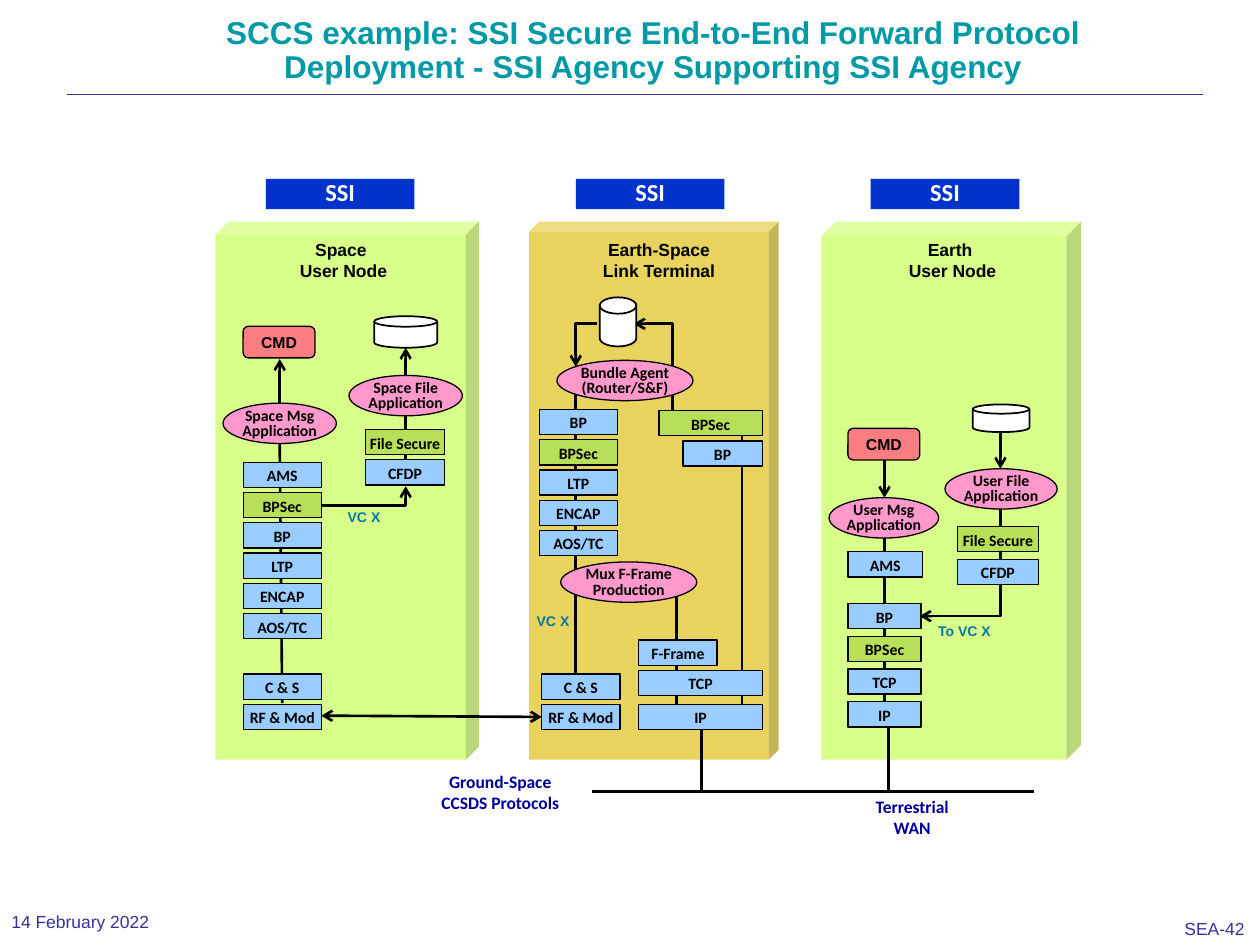
from lxml.etree import SubElement
from pptx import Presentation
from pptx.dml.color import RGBColor
from pptx.enum.shapes import MSO_CONNECTOR as Link, MSO_SHAPE as Shape
from pptx.enum.text import MSO_ANCHOR as Anchor, PP_ALIGN as Align
from pptx.oxml.ns import qn
from pptx.util import Inches, Pt

COLORS = {
    "title": "0099A6", "footer": "333399", "label": "000099", "channel": "0079A4",
    "user": "CCFF66", "terminal": "E0C62C", "header": "0033CC", "command": "FA7D81",
    "protocol": "99CCFF", "secure": "B7E058", "application": "FF99CC",
    "black": "000000", "white": "FFFFFF",
}
SECURE_PROTOCOLS = {"BPSec", "File Secure"}

# left, width, depth ratio, colour
NODES = [(6.52, 2.06, 0.056, "user"), (4.2, 1.98, 0.04, "terminal"),
         (1.71, 2.09, 0.049, "user")]
HEADER_LEFTS = [2.11, 4.57, 6.91]

# left, top, width, pitch, protocols from top to bottom
STACKS = [
    (1.93, 3.67, 0.62, 0.24, ["AMS", "BPSec", "BP", "LTP", "ENCAP", "AOS/TC"]),
    (1.93, 5.35, 0.62, 0.24, ["C & S", "RF & Mod"]),
    (2.9, 3.41, 0.63, 0.24, ["File Secure", "CFDP"]),
    (4.28, 3.25, 0.62, 0.24, ["BP", "BPSec", "LTP", "ENCAP", "AOS/TC"]),
    (4.3, 5.35, 0.62, 0.24, ["C & S", "RF & Mod"]),
    (5.23, 3.26, 0.82, 0.24, ["BPSec"]),
    (5.42, 3.5, 0.63, 0.24, ["BP"]),
    (5.07, 5.08, 0.62, 0.24, ["F-Frame"]),
    (5.07, 5.32, 0.98, 0.27, ["TCP", "IP"]),
    (6.73, 4.38, 0.59, 0.26, ["AMS"]),
    (6.73, 4.79, 0.58, 0.26, ["BP", "BPSec", "TCP", "IP"]),
    (7.6, 4.18, 0.64, 0.26, ["File Secure", "CFDP"]),
]
APPLICATIONS = [
    (1.77, 3.2, 0.9, "Space Msg\nApplication"),
    (2.77, 2.98, 0.9, "Space File Application"),
    (4.42, 2.86, 1.08, "Bundle Agent\v(Router/S&F)"),
    (4.45, 4.46, 1.08, "Mux F-Frame\nProduction"),
    (6.58, 3.95, 0.87, "User Msg\nApplication"),
    (7.5, 3.72, 0.89, "User File Application"),
]
COMMANDS = [(1.93, 2.59), (6.73, 3.4)]
STORES = [(2.97, 2.51, 0.5, 0.25), (4.76, 2.36, 0.29, 0.39), (7.72, 3.21, 0.45, 0.22)]

# start x, start y, end x, end y, arrow ends
LINES = [
    (4.7, 6.28, 8.21, 6.28, ""), (5.57, 5.78, 5.57, 6.28, ""),
    (7.05, 5.78, 7.05, 6.28, ""), (2.55, 5.68, 4.3, 5.69, "both"),
    (2.22, 3.52, 2.24, 5.58, ""), (3.22, 2.76, 3.22, 3.65, "start"),
    (2.22, 2.85, 2.22, 3.2, "start"), (4.57, 3.13, 4.57, 5.55, ""),
    (5.37, 4.74, 5.37, 5.59, ""), (5.89, 3.46, 5.89, 5.59, ""),
    (5.34, 3.13, 5.34, 3.3, ""), (7.02, 4.27, 7.02, 5.58, ""),
    (7.94, 3.44, 7.94, 3.72, "end"), (7.02, 3.65, 7.02, 3.95, "end"),
]
ELBOWS = [
    (2.55, 4.01, 3.22, 3.86, "end"), (5.03, 2.57, 5.34, 2.91, "start"),
    (4.74, 2.57, 4.57, 2.91, "end"), (7.3, 4.89, 7.94, 4.04, "start"),
]

# left, top, width, height, text, font, size, colour
LABELS = [
    (2.13, 1.85, 1.19, 0.44, "Space \vUser Node", "Arial", 10, "black"),
    (4.51, 1.85, 1.44, 0.44, "Earth-Space\nLink Terminal", "Arial", 10, "black"),
    (6.91, 1.85, 1.3, 0.44, "Earth \vUser Node", "Arial", 10, "black"),
    (3.32, 6.07, 1.3, 0.43, "Ground-Space\nCCSDS Protocols", "Calibri", 10, "label"),
    (6.67, 6.27, 1.14, 0.44, "Terrestrial\nWAN", "Calibri", 10, "label"),
    (2.66, 3.99, 0.46, 0.24, "VC X", "Arial", 8, "channel"),
    (4.16, 4.81, 0.46, 0.24, "VC X", "Arial", 8, "channel"),
    (7.34, 4.89, 0.63, 0.24, "To VC X", "Arial", 8, "channel"),
]


def rgb(name):
    return RGBColor.from_string(COLORS[name])


def write(item, text, font, size, color, bold=True, align=Align.CENTER,
          anchor=Anchor.TOP, spacing=None, insets=(0.1, 0.05), wrap=True):
    frame = item.text_frame
    frame.text = text
    frame.word_wrap = wrap
    frame.vertical_anchor = anchor
    frame.margin_left = frame.margin_right = Inches(insets[0])
    frame.margin_top = frame.margin_bottom = Inches(insets[1])
    for para in frame.paragraphs:
        para.alignment = align
        para.line_spacing = spacing
        para.font.name = font
        para.font.size = Pt(size)
        para.font.bold = bold
        para.font.color.rgb = rgb(color)


def add_label(page, left, top, width, height, text, font, size, color, **style):
    box = page.shapes.add_textbox(*map(Inches, (left, top, width, height)))
    write(box, text, font, size, color, **style)


def add_block(page, kind, left, top, width, height, fill, outline=0.75):
    block = page.shapes.add_shape(kind, *map(Inches, (left, top, width, height)))
    block.shadow.inherit = False
    block.fill.solid()
    block.fill.fore_color.rgb = rgb(fill)
    if outline:
        block.line.color.rgb = rgb("black")
        block.line.width = Pt(outline)
    else:
        block.line.fill.background()
    return block


def add_node(page, left, width, depth, color):
    """Draw a translucent cube that holds one node's protocols."""
    cube = add_block(page, Shape.CUBE, left, 1.76, width, 4.27, color, outline=0)
    cube.adjustments[0] = depth
    tint = cube.fill._xPr.find(".//" + qn("a:srgbClr"))
    SubElement(tint, qn("a:alpha"), val="76000")


def add_line(page, x1, y1, x2, y2, arrows="", elbow=False, color="black", width=1.5):
    """Draw a line; an elbow runs horizontally first, then vertically."""
    line = page.shapes.add_connector(Link.STRAIGHT, *map(Inches, (x1, y1, x2, y2)))
    line.line.color.rgb = rgb(color)
    line.line.width = Pt(width)
    properties = line._element.spPr
    if elbow:
        properties.find(qn("a:prstGeom")).set("prst", "bentConnector2")
    stroke = properties.find(qn("a:ln"))
    for tag, end in (("a:headEnd", "start"), ("a:tailEnd", "end")):
        if arrows in (end, "both"):
            SubElement(stroke, qn(tag), type="arrow")
    SubElement(properties, qn("a:effectLst"))


def add_stack(page, left, top, width, pitch, protocols):
    for row, name in enumerate(protocols):
        fill = "secure" if name in SECURE_PROTOCOLS else "protocol"
        block = add_block(page, Shape.RECTANGLE, left, top + row * pitch, width, 0.2, fill)
        write(block, name, "Calibri", 9, "black", insets=(0.02, 0.03))


def main():
    deck = Presentation()
    deck.slide_width, deck.slide_height = Inches(10), Inches(7.5)
    page = deck.slides.add_slide(deck.slide_layouts[6])

    add_line(page, 0.53, 0.75, 9.55, 0.75, color="footer", width=0.13)
    add_label(page, 1.35, 0.09, 7.67, 1.08,
              "SCCS example: SSI Secure End-to-End Forward Protocol Deployment"
              " - SSI Agency Supporting SSI Agency",
              "Arial", 18, "title", spacing=0.9)
    for node in NODES:
        add_node(page, *node)
    for left in HEADER_LEFTS:
        header = add_block(page, Shape.RECTANGLE, left, 1.42, 1.18, 0.24, "header", outline=0)
        write(header, "SSI", "Calibri", 14, "white", anchor=Anchor.MIDDLE, spacing=0.8)
    for line in LINES:
        add_line(page, *line)
    for elbow in ELBOWS:
        add_line(page, *elbow, elbow=True)
    for stack in STACKS:
        add_stack(page, *stack)
    for left, top, width, name in APPLICATIONS:
        bubble = add_block(page, Shape.OVAL, left, top, width, 0.32, "application")
        write(bubble, name, "Calibri", 9, "black", spacing=0.8, insets=(0, 0))
    for left, top in COMMANDS:
        command = add_block(page, Shape.ROUNDED_RECTANGLE, left, top, 0.57, 0.25, "command")
        write(command, "CMD", "Arial", 9, "black", anchor=Anchor.MIDDLE)
    for store in STORES:
        add_block(page, Shape.FLOWCHART_MAGNETIC_DISK, *store, "white", outline=1)
    for label in LABELS:
        add_label(page, *label, wrap="VC X" not in label[4])
    footer = {"bold": False, "align": Align.LEFT, "wrap": False}
    add_label(page, 0, 7.17, 1.89, 0.29, "14 February 2022", "Arial", 10, "footer",
              anchor=Anchor.MIDDLE, insets=(0.09, 0.05), **footer)
    add_label(page, 9.31, 7.24, 0.68, 0.26, "SEA-42", "Arial", 10, "footer",
              insets=(0.09, 0.05), **footer)
    deck.save("out.pptx")


if __name__ == "__main__":
    main()
